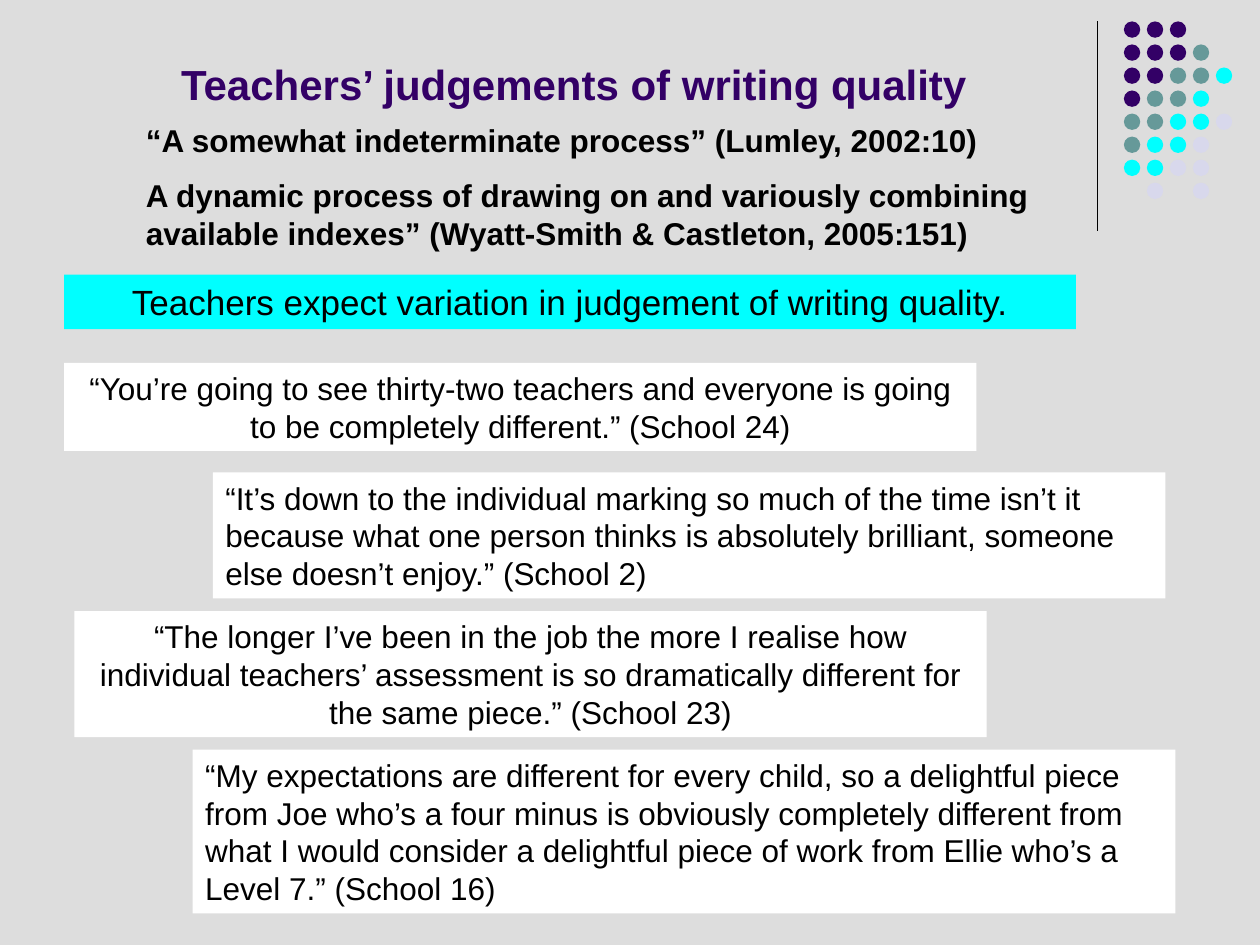
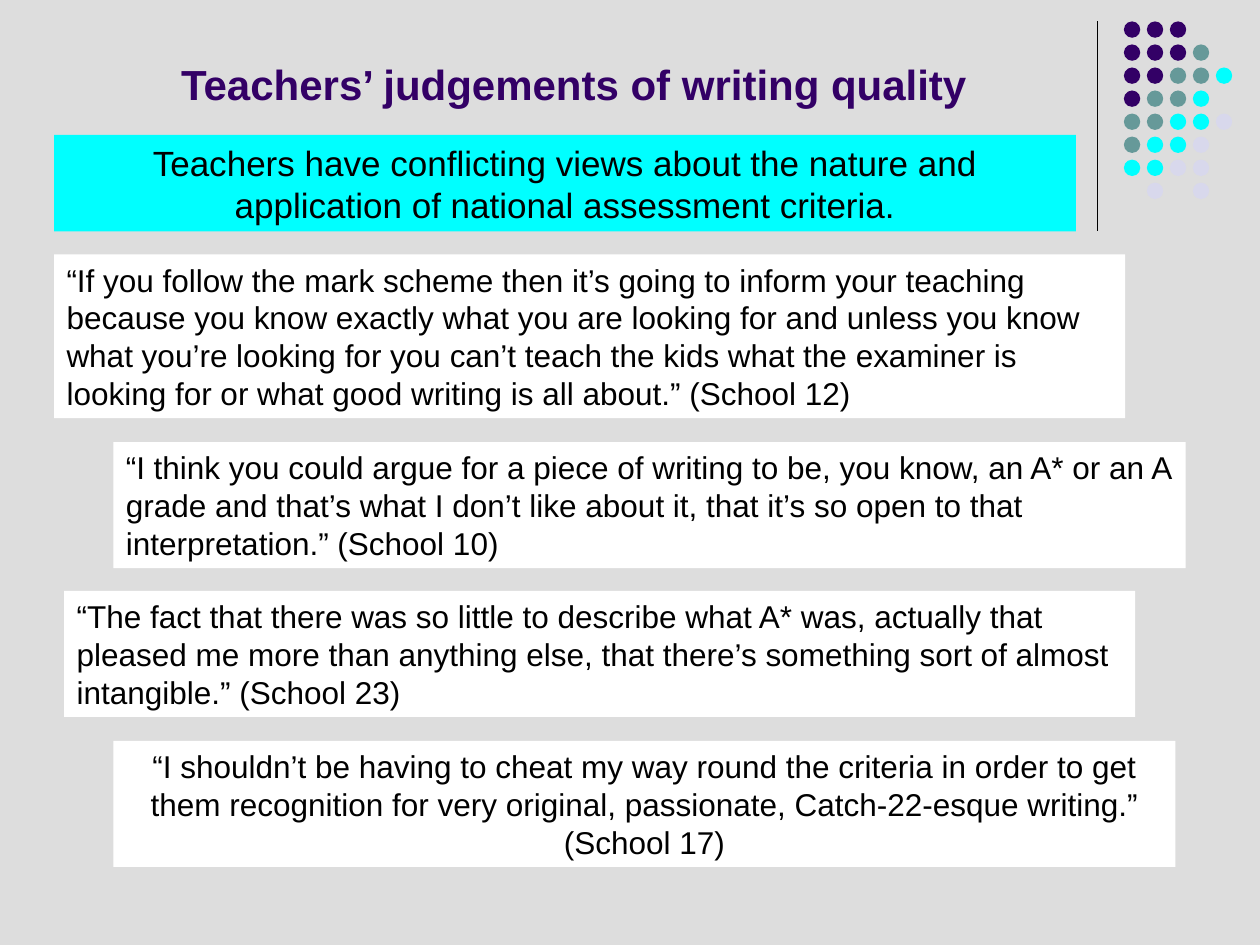
from dataclasses import dataclass

from lxml import etree
from pptx import Presentation
from pptx.dml.color import RGBColor
from pptx.enum.shapes import MSO_CONNECTOR, MSO_SHAPE
from pptx.enum.text import MSO_ANCHOR, MSO_AUTO_SIZE, PP_ALIGN
from pptx.oxml.ns import qn
from pptx.util import Inches, Pt

LEFT, CENTER = PP_ALIGN.LEFT, PP_ALIGN.CENTER
TOP, BOTTOM = MSO_ANCHOR.TOP, MSO_ANCHOR.BOTTOM
GROW, FIXED = MSO_AUTO_SIZE.SHAPE_TO_FIT_TEXT, MSO_AUTO_SIZE.NONE
RECTANGLE, OVAL = MSO_SHAPE.RECTANGLE, MSO_SHAPE.OVAL
STRAIGHT = MSO_CONNECTOR.STRAIGHT

SLIDE_WIDTH, SLIDE_HEIGHT = Inches(10), Inches(7.5)
COLUMNS, ROWS = 100, 75
BLANK_LAYOUT = 6


@dataclass(frozen=True)
class Theme:
    font: str = "Arial"
    background: str = "DDDDDD"
    text: str = "000000"
    title: str = "330066"
    banner: str = "00FFFF"
    quote: str = "FFFFFF"
    muted: str = "669999"
    pale: str = "D8D8EC"
    title_size: int = 24
    banner_size: int = 20
    body_size: int = 18
    paragraph_gap: int = 10
    rule_width: float = 0.75


THEME = Theme()


@dataclass(frozen=True)
class Box:
    left: float
    top: float
    width: float
    height: float

    def place(self):
        column, row = SLIDE_WIDTH / COLUMNS, SLIDE_HEIGHT / ROWS
        return [round(length * unit) for length, unit in zip(
            (self.left, self.top, self.width, self.height),
            (column, row, column, row))]


TITLE_BOX = Box(4.3, 3.6, 82.5, 5.5)
CITATION_BOX = Box(10.6, 9.1, 73.2, 11.5)
RULE_BOX = Box(87.1, 1.7, 0, 16.6)
DOT_BOX = Box(89.2, 1.7, 8.6, 14.1)
DOT_SIZE = 1.3
TEXT_PADDING = 1
QUOTE_LINE, BANNER_LINE = 3, 3.33

DOT_COLOURS = {"D": THEME.title, "M": THEME.muted, "B": THEME.banner, "P": THEME.pale}
DOT_PATTERN = ["DDD..", "DDDM.", "DDMMB", "DMMB.", "MMBBP", "MBBP.", "BBPP.", ".P.P."]

TITLE = "Teachers’ judgements of writing quality"
CITATIONS = [
    "“A somewhat indeterminate process” (Lumley, 2002:10)",
    "A dynamic process of drawing on and variously combining available indexes” "
    "(Wyatt-Smith & Castleton, 2005:151)",
]

VARIATION = {
    "citations": CITATIONS,
    "banner": (5.1, 21.8, 80.3, 1, CENTER,
               "Teachers expect variation in judgement of writing quality."),
    "quotes": [
        (5.1, 28.8, 72.4, 2, CENTER,
         "“You’re going to see thirty-two teachers and everyone is going to be "
         "completely different.” (School 24)"),
        (16.9, 37.5, 75.6, 3, LEFT,
         "“It’s down to the individual marking so much of the time isn’t it because "
         "what one person thinks is absolutely brilliant, someone else doesn’t "
         "enjoy.” (School 2)"),
        (5.9, 48.5, 72.4, 3, CENTER,
         "“The longer I’ve been in the job the more I realise how individual "
         "teachers’ assessment is so dramatically different for the same piece.” "
         "(School 23)"),
        (15.3, 59.5, 78, 4, LEFT,
         "“My expectations are different for every child, so a delightful piece from "
         "Joe who’s a four minus is obviously completely different from what I would "
         "consider a delightful piece of work from Ellie who’s a Level 7.” (School 16)"),
    ],
}

CONFLICT = {
    "citations": [],
    "banner": (4.3, 10.7, 81.1, 2, CENTER,
               "Teachers have conflicting views about the nature and application of "
               "national assessment criteria."),
    "quotes": [
        (4.3, 20.2, 85, 4, LEFT,
         "“If you follow the mark scheme then it’s going to inform your teaching "
         "because you know exactly what you are looking for and unless you know what "
         "you’re looking for you can’t teach the kids what the examiner is looking "
         "for or what good writing is all about.” (School 12)"),
        (9, 35.1, 85.1, 3, LEFT,
         "“I think you could argue for a piece of writing to be, you know, an A* or "
         "an A grade and that’s what I don’t like about it, that it’s so open to that "
         "interpretation.” (School 10)"),
        (5.1, 46.9, 85, 3, LEFT,
         "“The fact that there was so little to describe what A* was, actually that "
         "pleased me more than anything else, that there’s something sort of almost "
         "intangible.” (School 23)"),
        (9, 58.8, 84.3, 3, CENTER,
         "“I shouldn’t be having to cheat my way round the criteria in order to get "
         "them recognition for very original, passionate, Catch-22-esque writing.” "
         "(School 17)"),
    ],
}


def apply(target, formats):
    for name, value in formats.items():
        setattr(target, name, value)


def paint(shape, colour):
    shape.fill.solid()
    shape.fill.fore_color.rgb = RGBColor.from_string(colour)
    shape.line.fill.background()
    shape.shadow.inherit = False


def write(shape, texts, size, alignment=LEFT, colour=THEME.text, bold=False,
          anchor=TOP, fit=GROW):
    frame = shape.text_frame
    apply(frame, {"word_wrap": True, "vertical_anchor": anchor, "auto_size": fit})
    for index, text in enumerate(texts):
        paragraph = frame.add_paragraph() if index else frame.paragraphs[0]
        gap = Pt(THEME.paragraph_gap if index else 0)
        apply(paragraph, {"alignment": alignment, "space_before": gap})
        run = paragraph.add_run()
        run.text = text
        apply(run.font, {"name": THEME.font, "size": Pt(size), "bold": bold})
        run.font.color.rgb = RGBColor.from_string(colour)


def add_rule(slide, box):
    left, top, width, height = box.place()
    rule = slide.shapes.add_connector(STRAIGHT, left, top, left + width, top + height)
    rule.line.color.rgb = RGBColor.from_string(THEME.text)
    rule.line.width = Pt(THEME.rule_width)
    etree.SubElement(rule._element.spPr, qn("a:effectLst"))


def add_dots(slide, box):
    group = slide.shapes.add_group_shape()
    across = (box.width - DOT_SIZE) / (len(DOT_PATTERN[0]) - 1)
    down = (box.height - DOT_SIZE) / (len(DOT_PATTERN) - 1)
    for row, pattern in enumerate(DOT_PATTERN):
        for column, key in enumerate(pattern):
            if key in DOT_COLOURS:
                dot = Box(box.left + column * across, box.top + row * down,
                          DOT_SIZE, DOT_SIZE)
                paint(group.shapes.add_shape(OVAL, *dot.place()), DOT_COLOURS[key])


def add_title(slide, box):
    write(slide.shapes.add_textbox(*box.place()), [TITLE], THEME.title_size, CENTER,
          THEME.title, bold=True, anchor=BOTTOM, fit=FIXED)


def add_citations(slide, box, citations):
    write(slide.shapes.add_textbox(*box.place()), citations, THEME.body_size, bold=True)


def add_panel(slide, panel, fill, size, line_height):
    left, top, width, lines, alignment, text = panel
    box = Box(left, top, width, lines * line_height + TEXT_PADDING)
    shape = slide.shapes.add_shape(RECTANGLE, *box.place())
    paint(shape, fill)
    write(shape, [text], size, alignment)


def add_judgement_slide(presentation, content):
    slide = presentation.slides.add_slide(presentation.slide_layouts[BLANK_LAYOUT])
    slide.background.fill.solid()
    slide.background.fill.fore_color.rgb = RGBColor.from_string(THEME.background)
    add_rule(slide, RULE_BOX)
    add_dots(slide, DOT_BOX)
    add_title(slide, TITLE_BOX)
    if content["citations"]:
        add_citations(slide, CITATION_BOX, content["citations"])
    add_panel(slide, content["banner"], THEME.banner, THEME.banner_size, BANNER_LINE)
    for quote in content["quotes"]:
        add_panel(slide, quote, THEME.quote, THEME.body_size, QUOTE_LINE)


def main():
    presentation = Presentation()
    apply(presentation, {"slide_width": SLIDE_WIDTH, "slide_height": SLIDE_HEIGHT})
    for content in (VARIATION, CONFLICT):
        add_judgement_slide(presentation, content)
    presentation.save("out.pptx")


if __name__ == "__main__":
    main()
